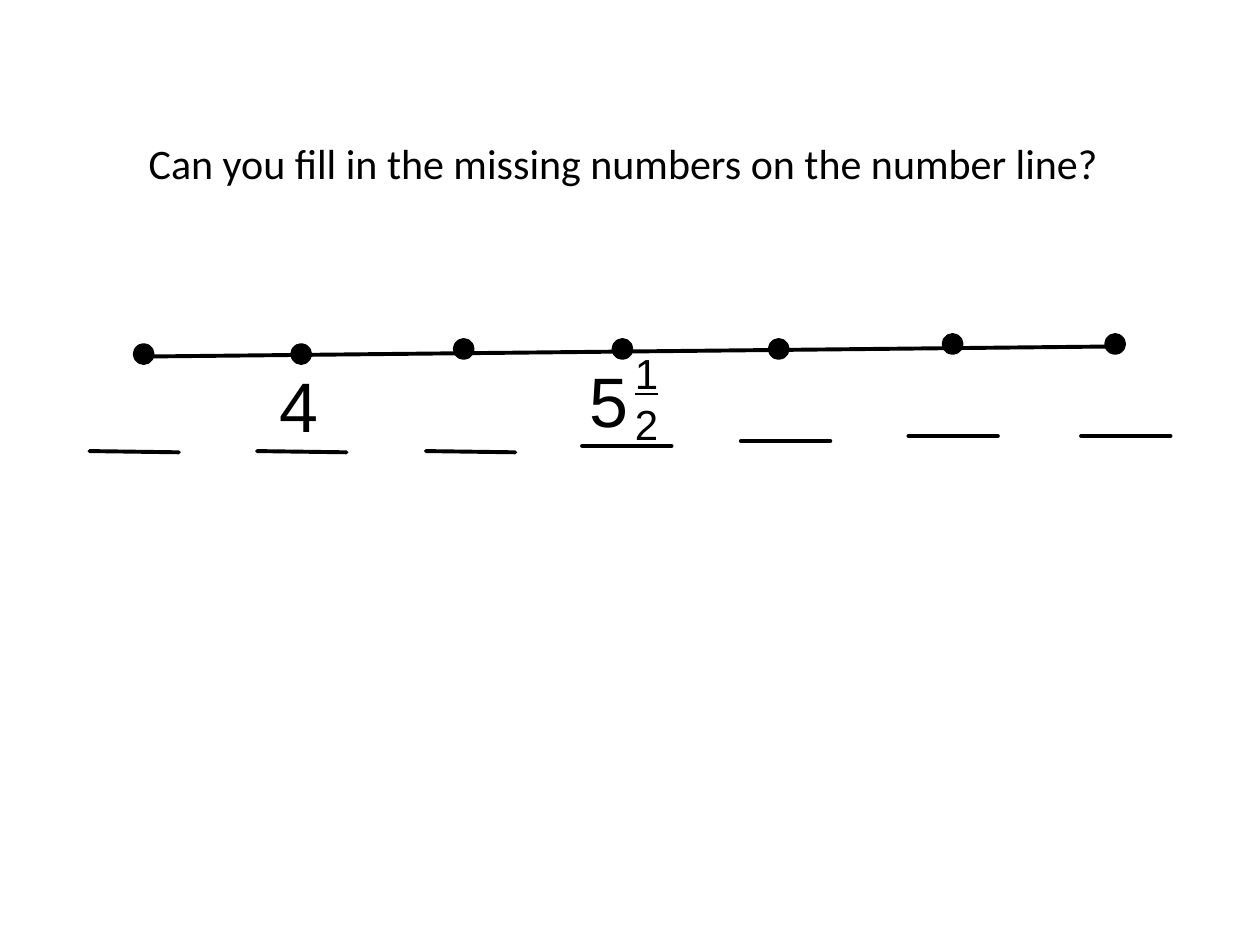
from lxml import etree
from pptx import Presentation, util as u
from pptx.dml.color import RGBColor
from pptx.enum import shapes, text
from pptx.oxml.ns import qn

BLACK = RGBColor(0, 0, 0)
DOT_SIZE = 0.12
BLANK_WIDTH = 0.71
DOTS = [(1.08, 2.75), (2.33, 2.75), (3.62, 2.71), (4.88, 2.71),
        (6.12, 2.71), (7.5, 2.67), (8.79, 2.67)]
BLANKS = [(0.71, 3.58, 0.01), (2.04, 3.58, 0.01), (3.38, 3.58, 0.01),
          (4.62, 3.54, 0), (5.88, 3.5, 0), (7.21, 3.46, 0), (8.58, 3.46, 0)]


def place(shape, left, top, width, height):
    """Set a shape's position and size in inches."""
    shape.left, shape.top = u.Inches(left), u.Inches(top)
    shape.width, shape.height = u.Inches(width), u.Inches(height)


def format_text(shape, lines, size, font_name):
    """Fill a shape with unwrapped, left-aligned black lines."""
    frame = shape.text_frame
    frame.text = "\n".join(lines)
    frame.word_wrap = False
    frame.auto_size = text.MSO_AUTO_SIZE.SHAPE_TO_FIT_TEXT
    frame.vertical_anchor = text.MSO_ANCHOR.TOP
    for paragraph in frame.paragraphs:
        paragraph.alignment = text.PP_ALIGN.LEFT
        paragraph.font.name = font_name
        paragraph.font.size = u.Pt(size)
        paragraph.font.color.rgb = BLACK


def add_title(slide, title):
    """Write the question into the title placeholder."""
    place(slide.shapes.title, 1.08, 1.04, 7.84, 0.5)
    format_text(slide.shapes.title, [title], 24, "Calibri")


def add_line(slide, x1, y1, x2, y2):
    """Draw a black line with round ends."""
    line = slide.shapes.add_connector(
        shapes.MSO_CONNECTOR.STRAIGHT, *map(u.Inches, (x1, y1, x2, y2)))
    line.line.color.rgb = BLACK
    line.line.width = u.Pt(2.25)
    properties = line._element.spPr
    properties.find(qn("a:ln")).set("cap", "rnd")
    etree.SubElement(properties, qn("a:effectLst"))


def add_dot(slide, left, top):
    """Mark a point on the number line."""
    dot = slide.shapes.add_shape(
        shapes.MSO_SHAPE.OVAL, *map(u.Inches, (left, top, DOT_SIZE, DOT_SIZE)))
    dot.shadow.inherit = False
    dot.fill.solid()
    dot.fill.fore_color.rgb = BLACK
    dot.line.color.rgb = BLACK
    dot.line.width = u.Pt(3.78)


def add_label(slide, lines, box, size):
    """Write a number below the line and return its text box."""
    label = slide.shapes.add_textbox(*map(u.Inches, box))
    format_text(label, lines, size, "Arial")
    return label


def main():
    """Build the number line slide."""
    presentation = Presentation()
    presentation.slide_width, presentation.slide_height = u.Inches(10), u.Inches(7.5)
    slide = presentation.slides.add_slide(
        presentation.slide_layouts.get_by_name("Title Only"))
    add_title(slide, "Can you fill in the missing numbers on the number line?")
    add_line(slide, 1.12, 2.83, 8.81, 2.75)
    for left, top in DOTS:
        add_dot(slide, left, top)
    for left, top, drop in BLANKS:
        add_line(slide, left, top, left + BLANK_WIDTH, top + drop)
    add_label(slide, ["4"], (2.12, 2.83, 0.51, 0.77), 40)
    add_label(slide, ["5"], (4.58, 2.79, 0.51, 0.77), 40)
    fraction = add_label(slide, ["1", "2"], (4.94, 2.71, 0.39, 0.91), 24)
    fraction.text_frame.paragraphs[0].runs[0].font.underline = True
    presentation.save("out.pptx")


if __name__ == "__main__":
    main()
